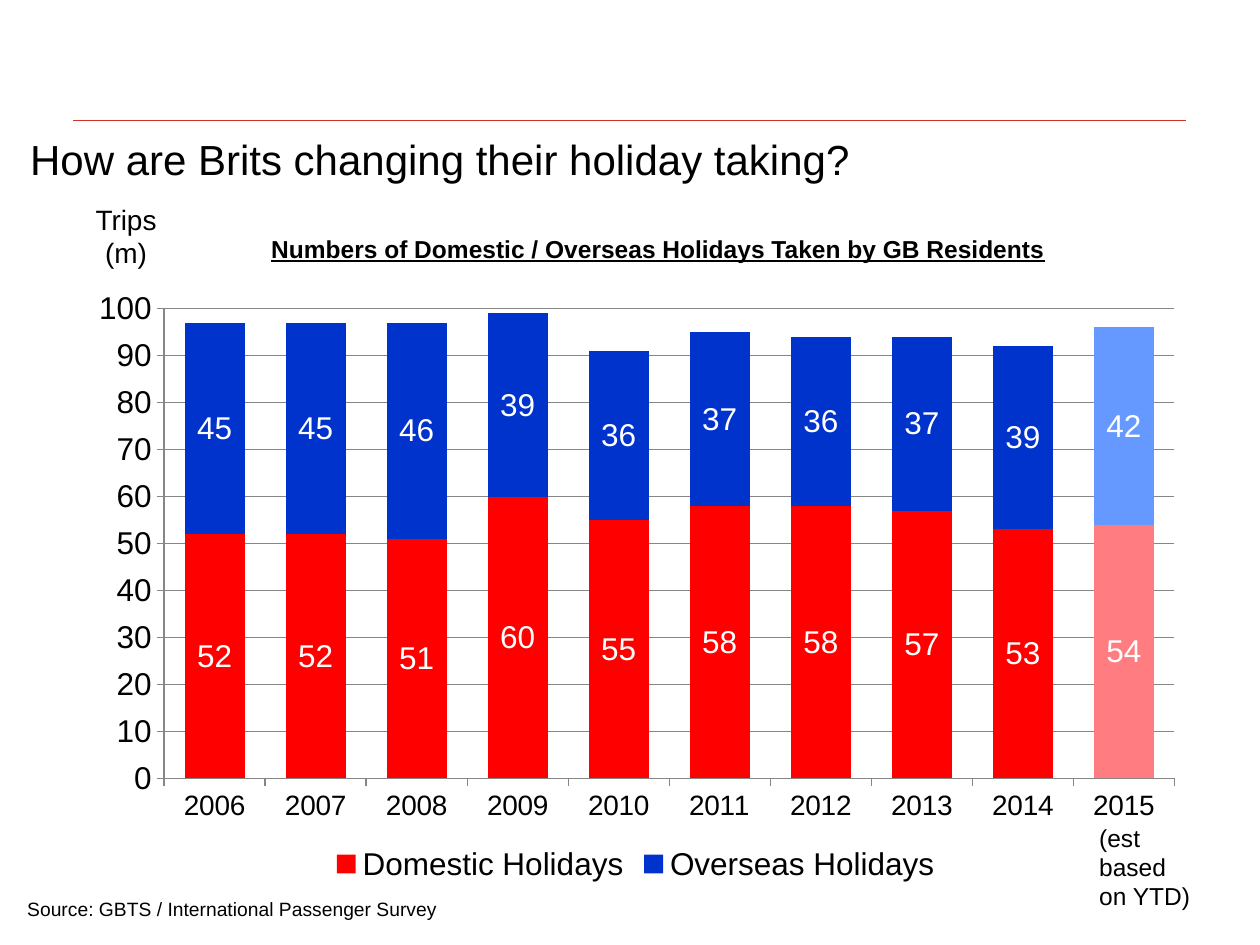
from pptx import Presentation
from pptx.chart.data import CategoryChartData
from pptx.dml.color import RGBColor
from pptx.enum.chart import XL_CHART_TYPE, XL_LABEL_POSITION, XL_LEGEND_POSITION, XL_TICK_MARK
from pptx.enum.shapes import MSO_CONNECTOR
from pptx.enum.text import MSO_ANCHOR, PP_ALIGN
from pptx.oxml import parse_xml
from pptx.oxml.ns import nsdecls, qn
from pptx.util import Pt

STACKED = XL_CHART_TYPE.COLUMN_STACKED
LABEL_CENTER = XL_LABEL_POSITION.CENTER
LEGEND_BOTTOM = XL_LEGEND_POSITION.BOTTOM
TICK_OUT, TICK_NONE = XL_TICK_MARK.OUTSIDE, XL_TICK_MARK.NONE
STRAIGHT = MSO_CONNECTOR.STRAIGHT
TOP, MIDDLE = MSO_ANCHOR.TOP, MSO_ANCHOR.MIDDLE
LEFT, CENTER = PP_ALIGN.LEFT, PP_ALIGN.CENTER

FONT = "Arial"
COLORS = {
    "text": "000000", "label": "FFFFFF", "rule": "CD3425", "grid": "868686",
    "domestic": "FF0000", "domestic_est": "FF7C80",
    "overseas": "0033CC", "overseas_est": "6699FF",
}
YEARS = [str(year) for year in range(2006, 2016)]
HOLIDAYS = [
    ("Domestic Holidays", "domestic", [52, 52, 51, 60, 55, 58, 58, 57, 53, 54]),
    ("Overseas Holidays", "overseas", [45, 45, 46, 39, 36, 37, 36, 37, 39, 42]),
]


def color(name):
    return RGBColor.from_string(COLORS[name])


def style_font(font, size, name="text"):
    font.name, font.size = FONT, Pt(size)
    font.color.rgb = color(name)


def write(shape, text, size=14, align=LEFT, anchor=TOP, bold=False, underline=False):
    """Fill a shape with text, one paragraph for each line."""
    frame = shape.text_frame
    frame.word_wrap = True
    frame.vertical_anchor = anchor
    frame.text = text
    for paragraph in frame.paragraphs:
        paragraph.alignment = align
        font = paragraph.runs[0].font
        style_font(font, size)
        font.bold, font.underline = bold, underline


def add_text(slide, box, text, **text_format):
    write(slide.shapes.add_textbox(*map(Pt, box)), text, **text_format)


def add_header(slide, box):
    """Thin rule with the slide title beneath it."""
    left, top, width, height = box
    rule = slide.shapes.add_connector(
        STRAIGHT, Pt(left + 32), Pt(top), Pt(left + 668), Pt(top))
    rule.line.color.rgb = color("rule")
    rule.line.width = Pt(0.75)
    rule._element.spPr.append(parse_xml(f"<a:effectLst {nsdecls('a')}/>"))

    title = slide.shapes.title
    title.left, title.top = Pt(left), Pt(top + 1.5)
    title.width, title.height = Pt(width), Pt(height)
    write(title, "How are Brits changing their holiday taking?", size=24, anchor=MIDDLE)


def fix_plot_area(chart, x, y, w, h):
    """Pin the inner plot area, in fractions of the chart's box."""
    area = chart._chartSpace.chart.plotArea
    for old in area.findall(qn("c:layout")):
        area.remove(old)
    area.insert(0, parse_xml(
        f"<c:layout {nsdecls('c')}><c:manualLayout>"
        '<c:layoutTarget val="inner"/><c:xMode val="edge"/><c:yMode val="edge"/>'
        f'<c:x val="{x}"/><c:y val="{y}"/><c:w val="{w}"/><c:h val="{h}"/>'
        "</c:manualLayout></c:layout>"))


def style_axes(chart):
    value_axis, year_axis = chart.value_axis, chart.category_axis
    value_axis.minimum_scale, value_axis.maximum_scale = 0, 100
    value_axis.major_unit = 10
    value_axis.has_major_gridlines = True
    value_axis.tick_labels.number_format = "0"
    value_axis.tick_labels.number_format_is_linked = False
    for axis, size in ((value_axis, 18), (year_axis, 16)):
        axis.major_tick_mark, axis.minor_tick_mark = TICK_OUT, TICK_NONE
        style_font(axis.tick_labels.font, size)
    for line in (value_axis.major_gridlines.format.line,
                 value_axis.format.line, year_axis.format.line):
        line.color.rgb = color("grid")
        line.width = Pt(0.75)


def add_holiday_chart(slide, box):
    data = CategoryChartData(number_format="0")
    data.categories = YEARS
    for name, _, trips in HOLIDAYS:
        data.add_series(name, trips)
    chart = slide.shapes.add_chart(STACKED, *map(Pt, box), data).chart
    style_font(chart.font, 18)
    chart.has_title = False
    fix_plot_area(chart, 0.08, 0.05, 0.9, 0.77)
    style_axes(chart)

    chart.has_legend = True
    chart.legend.position = LEGEND_BOTTOM
    chart.legend.include_in_layout = False
    style_font(chart.legend.font, 18)

    plot = chart.plots[0]
    plot.gap_width, plot.overlap = 68, 100
    plot.vary_by_categories = False
    for series, (_, key, trips) in zip(plot.series, HOLIDAYS):
        # The last year is an estimate, in a lighter tint
        for part, tint in ((series, key), (series.points[len(trips) - 1], key + "_est")):
            part.format.fill.solid()
            part.format.fill.fore_color.rgb = color(tint)
        labels = series.data_labels
        labels.show_value = True
        labels.position = LABEL_CENTER
        labels.number_format, labels.number_format_is_linked = "0", False
        style_font(labels.font, 18, "label")


def add_chart_notes(slide, box):
    """Captions above and below the chart, relative to the chart's box."""
    left, top, width, height = box
    add_text(slide, (left - 2, top - 47, 63, 46), "Trips\n(m)", size=16, align=CENTER)
    add_text(slide, (left - 2, top - 29, 671, 24),
             "Numbers of Domestic / Overseas Holidays Taken by GB Residents",
             align=CENTER, bold=True, underline=True)
    add_text(slide, (left + width - 63, top + height - 41, 71, 58), "(est based on YTD)")
    add_text(slide, (left - 34, top + height + 1.5, 374, 21),
             "Source: GBTS / International Passenger Survey", size=11)


def main():
    presentation = Presentation()
    presentation.slide_width, presentation.slide_height = Pt(720), Pt(540)
    slide = presentation.slides.add_slide(presentation.slide_layouts[5])
    chart_box = (42.5, 159, 641.5, 348.5)
    add_header(slide, (10, 69, 707, 40))
    add_holiday_chart(slide, chart_box)
    add_chart_notes(slide, chart_box)
    presentation.save("out.pptx")


if __name__ == "__main__":
    main()
